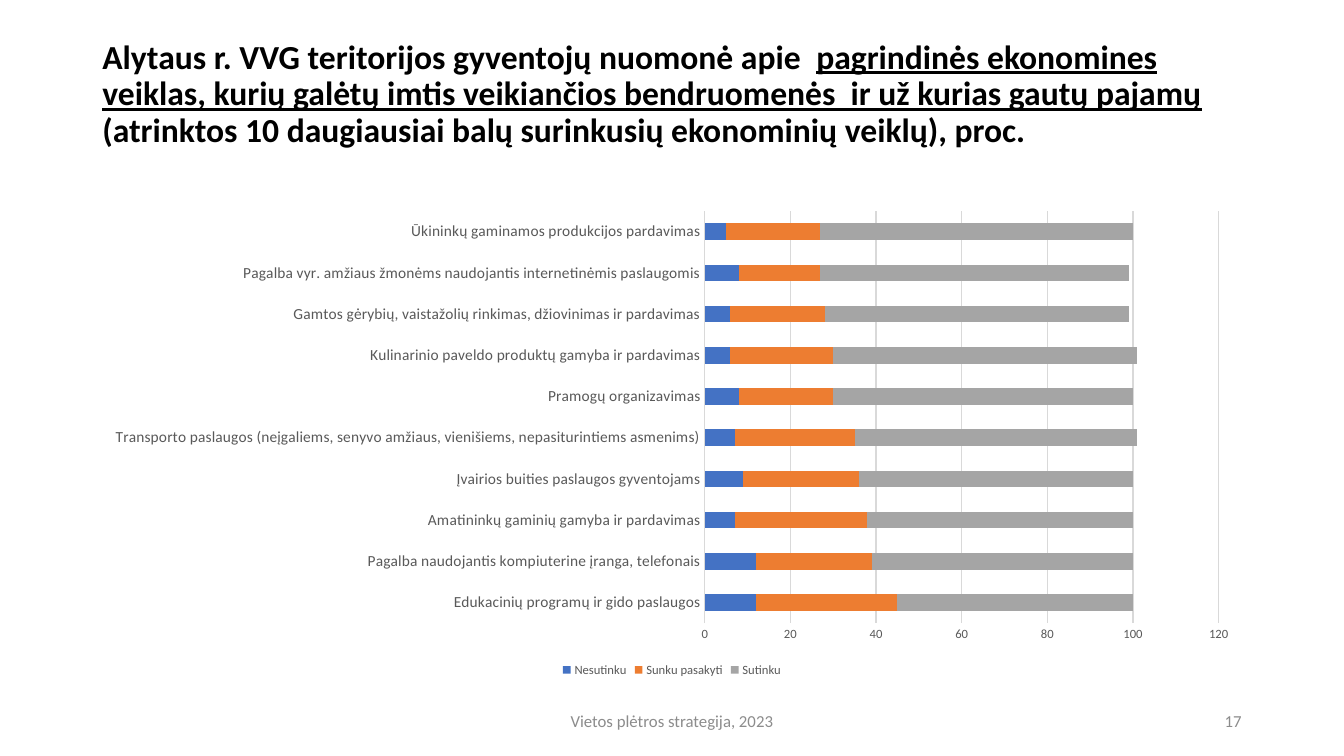
from dataclasses import dataclass

from pptx import Presentation
from pptx import util as u
from pptx.chart.data import CategoryChartData
from pptx.dml.color import RGBColor
from pptx.enum import chart as charts
from pptx.enum import text

FONT = "Calibri"
BLACK = RGBColor(0x00, 0x00, 0x00)
FOOTER_GREY = RGBColor(0x8C, 0x8C, 0x8C)
LABEL_GREY = RGBColor(0x59, 0x59, 0x59)
LINE_GREY = RGBColor(0xD9, 0xD9, 0xD9)
BLUE = RGBColor(0x44, 0x72, 0xC4)
ORANGE = RGBColor(0xED, 0x7D, 0x31)
GREY = RGBColor(0xA5, 0xA5, 0xA5)

MARGIN = u.Cm(2.33)
CONTENT_WIDTH = u.Cm(29.21)
FOOTER_TOP = u.Cm(17.65)
FOOTER_HEIGHT = u.Cm(1.01)


@dataclass(frozen=True)
class Run:
    text: str
    underline: bool = False


@dataclass(frozen=True)
class TextBlock:
    runs: tuple[Run, ...]
    left: u.Length
    top: u.Length
    width: u.Length
    height: u.Length
    size: int
    color: RGBColor
    alignment: text.PP_ALIGN
    anchor: text.MSO_ANCHOR = text.MSO_ANCHOR.MIDDLE
    bold: bool = False
    line_spacing: float = 1.0


@dataclass(frozen=True)
class Answer:
    name: str
    color: RGBColor
    percentages: tuple[int, ...]


TEXT_BLOCKS = (
    TextBlock(
        (
            Run("Alytaus r. VVG teritorijos gyventojų nuomonė apie  "),
            Run("pagrindinės ekonomines veiklas, kurių galėtų imtis veikiančios "
                "bendruomenės  ir už kurias gautų pajamų ", underline=True),
            Run("(atrinktos 10 daugiausiai balų surinkusių ekonominių veiklų), proc."),
        ),
        MARGIN, u.Cm(1.02), CONTENT_WIDTH, u.Cm(3.68), 24, BLACK,
        text.PP_ALIGN.LEFT, text.MSO_ANCHOR.TOP, bold=True, line_spacing=0.9,
    ),
    TextBlock((Run("Vietos plėtros strategija, 2023"),), u.Cm(11.22), FOOTER_TOP,
              u.Cm(11.43), FOOTER_HEIGHT, 12, FOOTER_GREY, text.PP_ALIGN.CENTER),
    TextBlock((Run("17"),), u.Cm(23.92), FOOTER_TOP,
              u.Cm(7.62), FOOTER_HEIGHT, 12, FOOTER_GREY, text.PP_ALIGN.RIGHT),
)

ACTIVITIES = (
    "Edukacinių programų ir gido paslaugos",
    "Pagalba naudojantis kompiuterine įranga, telefonais",
    "Amatininkų gaminių gamyba ir pardavimas",
    "Įvairios buities paslaugos gyventojams",
    "Transporto paslaugos (neįgaliems, senyvo amžiaus, vienišiems, "
    "nepasiturintiems asmenims)",
    "Pramogų organizavimas",
    "Kulinarinio paveldo produktų gamyba ir pardavimas",
    "Gamtos gėrybių, vaistažolių rinkimas, džiovinimas ir pardavimas",
    "Pagalba vyr. amžiaus žmonėms naudojantis internetinėmis paslaugomis",
    "Ūkininkų gaminamos produkcijos pardavimas",
)

ANSWERS = (
    Answer("Nesutinku", BLUE, (12, 12, 7, 9, 7, 8, 6, 6, 8, 5)),
    Answer("Sunku pasakyti", ORANGE, (33, 27, 31, 27, 28, 22, 24, 22, 19, 22)),
    Answer("Sutinku", GREY, (55, 61, 62, 64, 66, 70, 71, 71, 72, 73)),
)


def style_font(font, size: int, color: RGBColor, bold: bool = False) -> None:
    font.name = FONT
    font.size = u.Pt(size)
    font.bold = bold
    font.color.rgb = color


def style_line(line) -> None:
    line.color.rgb = LINE_GREY
    line.width = u.Pt(0.75)


def add_text_block(slide, block: TextBlock) -> None:
    shape = slide.shapes.add_textbox(block.left, block.top, block.width, block.height)
    frame = shape.text_frame
    frame.word_wrap = True
    frame.vertical_anchor = block.anchor
    if block.anchor == text.MSO_ANCHOR.TOP:
        frame.margin_top = 0
    paragraph = frame.paragraphs[0]
    paragraph.alignment = block.alignment
    paragraph.line_spacing = block.line_spacing
    for part in block.runs:
        run = paragraph.add_run()
        run.text = part.text
        run.font.underline = part.underline
        style_font(run.font, block.size, block.color, block.bold)


def style_axes(chart) -> None:
    category_axis, value_axis = chart.category_axis, chart.value_axis
    for axis, size in ((category_axis, 11), (value_axis, 9)):
        axis.major_tick_mark = charts.XL_TICK_MARK.NONE
        axis.minor_tick_mark = charts.XL_TICK_MARK.NONE
        style_font(axis.tick_labels.font, size, LABEL_GREY)
    category_axis.has_major_gridlines = False
    style_line(category_axis.format.line)
    value_axis.minimum_scale = 0
    value_axis.maximum_scale = 120
    value_axis.major_unit = 20
    value_axis.format.line.fill.background()
    value_axis.has_major_gridlines = True
    style_line(value_axis.major_gridlines.format.line)


def add_opinion_chart(slide) -> None:
    data = CategoryChartData(number_format="General")
    data.categories = ACTIVITIES
    for answer in ANSWERS:
        data.add_series(answer.name, answer.percentages)
    chart = slide.shapes.add_chart(
        charts.XL_CHART_TYPE.BAR_STACKED, MARGIN, u.Cm(5.08),
        CONTENT_WIDTH, u.Cm(12.09), data,
    ).chart
    style_font(chart.font, 10, BLACK)
    chart.has_title = False
    style_axes(chart)

    plot = chart.plots[0]
    plot.gap_width = 150
    plot.overlap = 100
    plot.vary_by_categories = False
    for series, answer in zip(plot.series, ANSWERS):
        series.format.fill.solid()
        series.format.fill.fore_color.rgb = answer.color

    chart.has_legend = True
    chart.legend.position = charts.XL_LEGEND_POSITION.BOTTOM
    chart.legend.include_in_layout = False
    style_font(chart.legend.font, 9, LABEL_GREY)


def main() -> None:
    presentation = Presentation()
    presentation.slide_width = u.Cm(33.87)
    presentation.slide_height = u.Cm(19.05)
    slide = presentation.slides.add_slide(presentation.slide_layouts[6])
    for block in TEXT_BLOCKS:
        add_text_block(slide, block)
    add_opinion_chart(slide)
    presentation.save("out.pptx")


if __name__ == "__main__":
    main()
